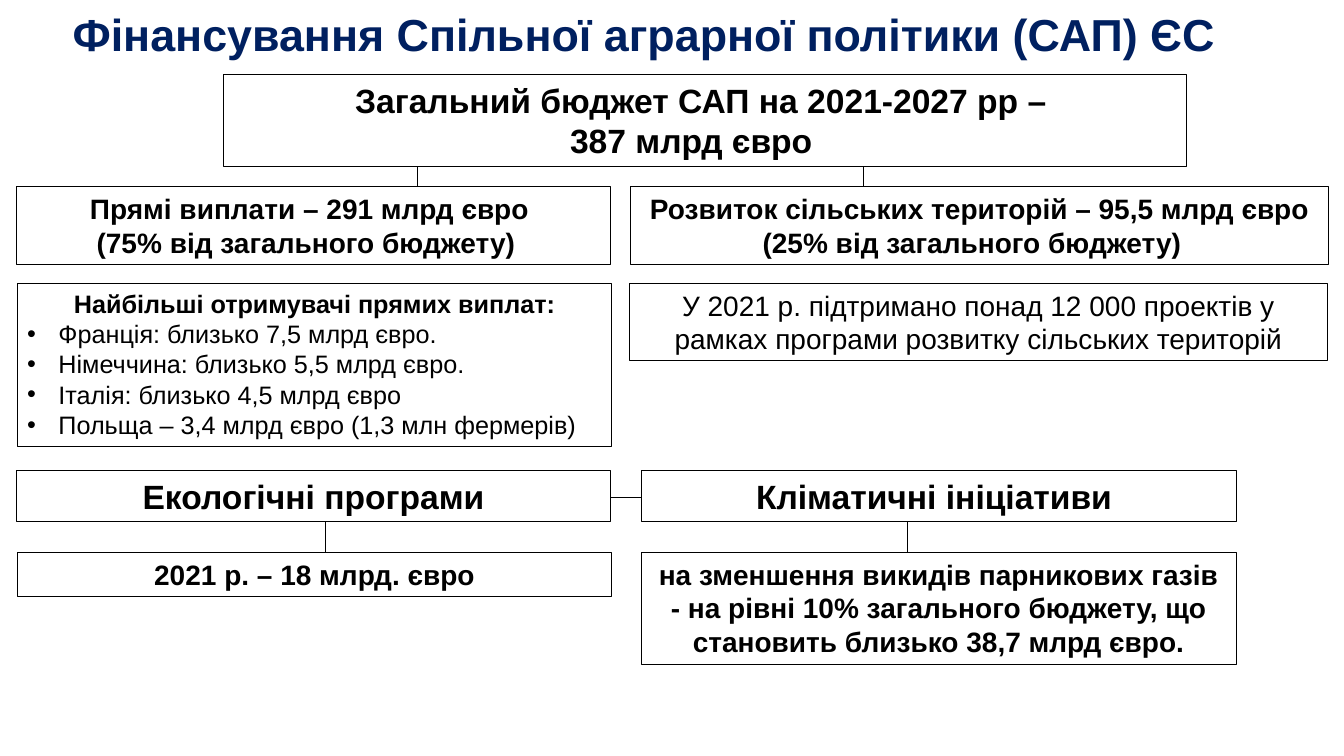
from pptx import Presentation
from pptx import util as u
from pptx.dml.color import RGBColor
from pptx.enum import shapes, text
from pptx.oxml import parse_xml
from pptx.oxml.ns import nsdecls

THEME = {
    "font": "Arial",
    "title": RGBColor(0x00, 0x20, 0x60),
    "ink": RGBColor(0, 0, 0),
    "title_size": 32, "head": 24, "body": 20, "list": 18,
    "box_line": 0.75, "link_line": 0.5,
}


def write(p, words, size, bold=True, color="ink", **layout):
    """Add one run to a paragraph and format both."""
    r = p.add_run()
    r.text = words
    font = {"name": THEME["font"], "size": u.Pt(THEME[size]), "bold": bold}
    for name, value in font.items():
        setattr(r.font, name, value)
    r.font.color.rgb = THEME[color]
    spacing = {"alignment": text.PP_ALIGN.CENTER,
               "space_before": u.Pt(0), "space_after": u.Pt(0)}
    for name, value in {**spacing, **layout}.items():
        setattr(p, name, value)


def frame(sp, x, y, w, h):
    """Place an outlined box of fixed size and return its text frame."""
    place = {"left": x, "top": y, "width": w, "height": h}
    for name, value in place.items():
        setattr(sp, name, u.Inches(value))
    sp.line.color.rgb = THEME["ink"]
    sp.line.width = u.Pt(THEME["box_line"])
    sp.fill.background()
    tf = sp.text_frame
    options = {"word_wrap": True, "vertical_anchor": text.MSO_ANCHOR.TOP,
               "auto_size": text.MSO_AUTO_SIZE.NONE}
    for name, value in options.items():
        setattr(tf, name, value)
    return tf


prs = Presentation()
prs.slide_width, prs.slide_height = u.Inches(13.33), u.Inches(7.5)
s = prs.slides.add_slide(prs.slide_layouts[1])
title, recipients = s.placeholders

# Title
place = {"left": 0.62, "top": 0, "width": 12.4, "height": 0.74}
for name, value in place.items():
    setattr(title, name, u.Inches(value))
title.text_frame.vertical_anchor = text.MSO_ANCHOR.MIDDLE
write(title.text_frame.paragraphs[0],
      "Фінансування Спільної аграрної політики (САП) ЄС",
      "title_size", color="title", alignment=text.PP_ALIGN.LEFT,
      line_spacing=0.9)

# Columns, rows and widths of the scheme
LEFT, RIGHT, CLIMATE = 0.16, 6.25, 6.36
BUDGET, SHARES, DETAILS, PROGRAMMES, AMOUNTS = 0.74, 1.85, 2.81, 4.67, 5.48
NARROW, WIDE = 5.9, 6.93

# Boxes: place, size of type, bold, lines as (words, right indent)
boxes = [
    ((2.22, BUDGET, 9.55, 0.91), "head", True,
     [("Загальний бюджет САП на 2021-2027 рр –", 0.09),
      ("387 млрд євро", 0.28)]),
    ((LEFT, SHARES, NARROW, 0.77), "body", True,
     [("Прямі виплати – 291 млрд євро", 0.08),
      ("(75% від загального бюджету)", 0.15)]),
    ((RIGHT, SHARES, WIDE, 0.77), "body", True,
     [("Розвиток сільських територій – 95,5 млрд євро", 0),
      ("(25% від загального бюджету)", 0.15)]),
    ((RIGHT - 0.01, DETAILS, WIDE, 0.77), "body", False,
     [("У 2021 р. підтримано понад 12 000 проектів у рамках програми "
       "розвитку сільських територій", 0)]),
    ((LEFT, PROGRAMMES, NARROW, 0.5), "head", True,
     [("Екологічні програми", 0)]),
    ((LEFT + 0.01, AMOUNTS, NARROW, 0.44), "body", True,
     [("2021 р. – 18 млрд. євро", 0)]),
    ((CLIMATE, PROGRAMMES, NARROW, 0.5), "head", True,
     [("Кліматичні ініціативи", 0.09)]),
    ((CLIMATE, AMOUNTS, NARROW, 1.11), "body", True,
     [("на зменшення викидів парникових газів - на рівні 10% загального "
       "бюджету, що становить близько 38,7 млрд євро.", 0)]),
]
for place, size, bold, lines in boxes:
    sp = s.shapes.add_shape(shapes.MSO_SHAPE.RECTANGLE, 0, 0, 0, 0)
    sp.shadow.inherit = False
    tf = frame(sp, *place)
    for i, (words, indent) in enumerate(lines):
        p = tf.add_paragraph() if i else tf.paragraphs[0]
        write(p, words, size, bold)
        p._p.get_or_add_pPr().set("marR", str(u.Inches(indent)))

# List of the largest recipients
tf = frame(recipients, LEFT + 0.01, DETAILS, NARROW, 1.62)
countries = [
    "Франція: близько 7,5 млрд євро.",
    "Німеччина: близько 5,5 млрд євро.",
    "Італія: близько 4,5 млрд євро",
    "Польща – 3,4 млрд євро (1,3 млн фермерів)",
]
heading = tf.paragraphs[0]
write(heading, "Найбільші отримувачі прямих виплат:", "list")
pPr = heading._p.get_or_add_pPr()
pPr.set("marL", "0")
pPr.set("indent", "0")
pPr.append(parse_xml(f"<a:buNone {nsdecls('a')}/>"))
for country in countries:
    p = tf.add_paragraph()
    write(p, country, "list", False, alignment=text.PP_ALIGN.LEFT)
    pPr = p._p.get_or_add_pPr()
    pPr.set("marL", str(u.Inches(0.31)))
    pPr.set("indent", str(-u.Inches(0.31)))
    pPr.append(parse_xml(f'<a:buFont {nsdecls("a")} typeface="Arial"/>'))
    pPr.append(parse_xml(f'<a:buChar {nsdecls("a")} char="•"/>'))

# Links between the boxes
links = [
    (4.14, 1.65, 4.14, SHARES),
    (8.56, 1.65, 8.56, SHARES),
    (3.23, 5.18, 3.23, AMOUNTS),
    (9, 5.18, 9, AMOUNTS),
    (CLIMATE, 4.93, LEFT + NARROW, 4.93),
]
for ends in links:
    link = s.shapes.add_connector(shapes.MSO_CONNECTOR.STRAIGHT,
                                  *map(u.Inches, ends))
    link.line.color.rgb = THEME["ink"]
    link.line.width = u.Pt(THEME["link_line"])
    link._element.spPr.append(parse_xml(f"<a:effectLst {nsdecls('a')}/>"))

prs.save("out.pptx")
